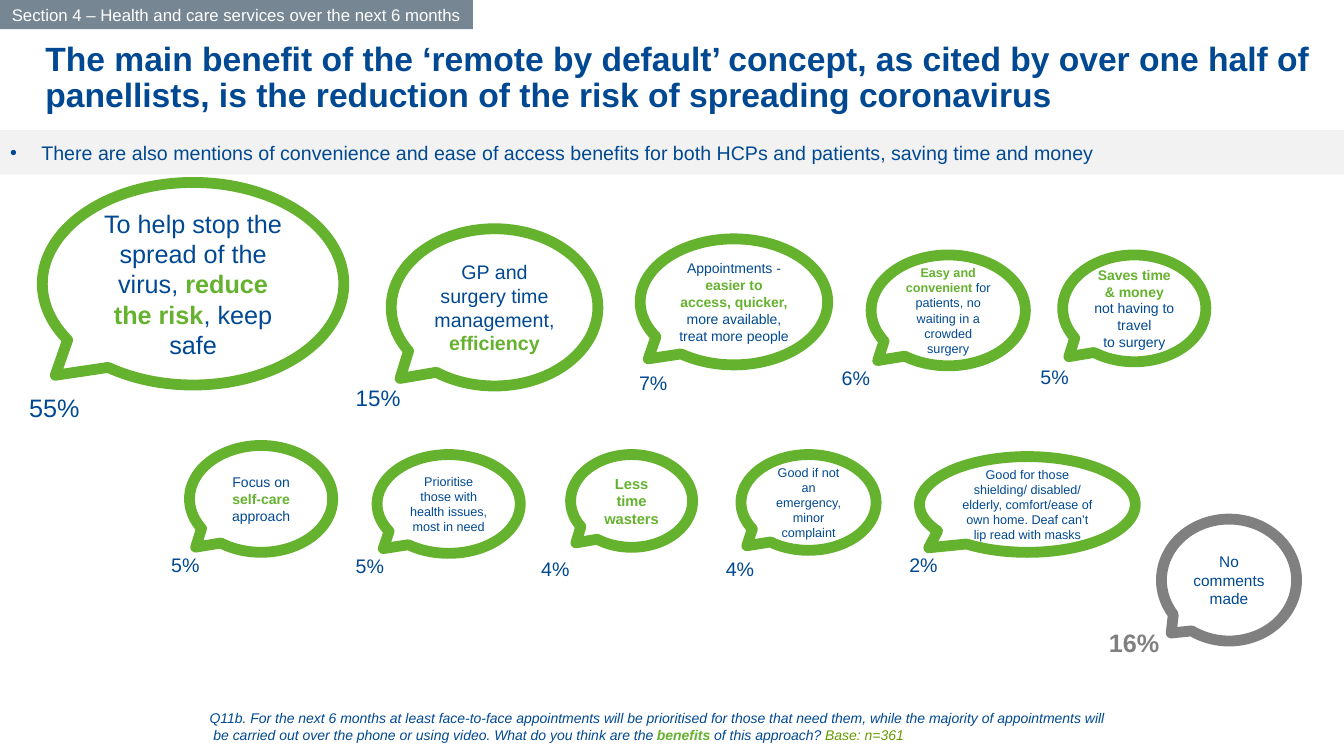
from pptx import Presentation
from pptx.dml.color import RGBColor
from pptx.enum.shapes import MSO_SHAPE as Shape
from pptx.enum.text import MSO_ANCHOR as Anchor, MSO_AUTO_SIZE as AutoSize, PP_ALIGN as Align
from pptx.util import Inches, Pt

COLOURS = {
    "navy": "004992",
    "green": "65B22E",
    "base": "669900",
    "grey": "808080",
    "tag": "768692",
    "band": "F2F2F2",
    "white": "FFFFFF",
}

LABEL_HEIGHTS = {14: 0.34, 16: 0.37, 18: 0.4}
GREEN_TAIL = (-0.457, 0.452)
GREY_TAIL = (-0.428, 0.434)

# Bubble box, text size, text with *accents*, then share, its left, top, width and size.
MENTIONS = [
    ((0.42, 1.81, 2.99, 2.01), 18, "To help stop the spread of the virus, *reduce the risk*, keep safe",
     ("55%", 0.19, 3.84, 0.71, 18)),
    ((3.88, 2.27, 2.05, 1.56), 14, "GP and surgery time\nmanagement, *efficiency*",
     ("15%", 3.43, 3.76, 0.65, 16)),
    ((6.35, 2.37, 1.86, 1.25), 10,
     "Appointments - *easier to*\n*access, quicker, *more available, treat more people",
     ("7%", 6.24, 3.63, 0.49, 14)),
    ((8.64, 2.53, 1.53, 1.1), 9, "*Easy and convenient *for patients, no waiting in a crowded surgery",
     ("6%", 8.25, 3.58, 0.49, 14)),
    ((10.54, 2.53, 1.42, 1.06), 10, "*Saves time & money *not having to travel\nto surgery",
     ("5%", 10.22, 3.57, 0.49, 14)),
    ((1.88, 4.42, 1.42, 1.06), 10, "Focus on *self-care *approach",
     ("5%", 1.6, 5.44, 0.56, 14)),
    ((3.74, 4.51, 1.42, 0.98), 9, "Prioritise those with health issues, most in need",
     ("5%", 3.43, 5.45, 0.56, 14)),
    ((5.66, 4.51, 1.21, 0.92), 10.5, "*Less time wasters*",
     ("4%", 5.27, 5.48, 0.56, 14)),
    ((7.35, 4.51, 1.34, 0.95), 9, "Good if not an emergency, minor complaint",
     ("4%", 7.1, 5.48, 0.49, 14)),
    ((9.12, 4.53, 2.14, 0.95), 9,
     "Good for those shielding/ disabled/ elderly, comfort/ease of own home. "
     "Deaf can’t lip read with masks",
     ("2%", 8.92, 5.44, 0.49, 14)),
]


def colour(name):
    """Return a palette colour."""
    return RGBColor.from_string(COLOURS[name])


def inches(box):
    """Convert a box of numbers to lengths."""
    return [Inches(value) for value in box]


def place(shape, box):
    """Move and size a placeholder."""
    shape.left, shape.top, shape.width, shape.height = inches(box)


def write(shape, text, size, ink="navy", bold=False, italic=False, align=Align.LEFT, anchor=Anchor.TOP):
    """Fill a shape with paragraphs, showing *marked* parts in bold green."""
    frame = shape.text_frame
    frame.word_wrap = True
    frame.auto_size = AutoSize.NONE
    frame.vertical_anchor = anchor
    for index, line in enumerate(text.split("\n")):
        paragraph = frame.add_paragraph() if index else frame.paragraphs[0]
        paragraph.alignment = align
        paragraph.space_before = Pt(0)
        font = paragraph.font
        font.name, font.size, font.bold, font.italic = "Arial", Pt(size), bold, italic
        font.color.rgb = colour(ink)
        for position, part in enumerate(line.split("*")):
            if part:
                run = paragraph.add_run()
                run.text = part
                if position % 2:
                    run.font.bold = True
                    run.font.color.rgb = colour("green")
    return frame


def add_label(slide, text, left, top, width, size, ink="navy", bold=False):
    """Add the share of panellists beside a bubble."""
    box = (left, top, width, LABEL_HEIGHTS[size])
    write(slide.shapes.add_textbox(*inches(box)), text, size, ink, bold)


def add_bubble(slide, box, size, text, outline="green", tail=GREEN_TAIL):
    """Add an outlined speech bubble."""
    bubble = slide.shapes.add_shape(Shape.OVAL_CALLOUT, *inches(box))
    bubble.shadow.inherit = False
    bubble.adjustments[0], bubble.adjustments[1] = tail
    bubble.fill.background()
    bubble.line.color.rgb = colour(outline)
    bubble.line.width = Pt(7.75)
    write(bubble, text, size, align=Align.CENTER, anchor=Anchor.MIDDLE)


def add_section_tag(slide, text):
    """Add the section strip at the top left."""
    tag = slide.shapes.add_shape(Shape.RECTANGLE, *inches((0, 0, 4.69, 0.29)))
    tag.shadow.inherit = False
    tag.fill.solid()
    tag.fill.fore_color.rgb = colour("tag")
    tag.line.fill.background()
    write(tag, text, 12, "white", align=Align.CENTER, anchor=Anchor.MIDDLE)


def fill_title(slide, text):
    """Place and fill the title."""
    title = slide.shapes.title
    place(title, (0.21, 0.37, 13.3, 0.73))
    frame = write(title, text, 24, bold=True)
    frame.margin_left = frame.margin_right = Inches(0.24)
    frame.paragraphs[0].line_spacing = 0.9


def fill_summary(slide, text):
    """Place and fill the bulleted band below the title."""
    band = slide.placeholders[1]
    place(band, (0, 1.29, 13.33, 0.44))
    band.fill.solid()
    band.fill.fore_color.rgb = colour("band")
    frame = write(band, text, 14, anchor=Anchor.MIDDLE)
    properties = frame.paragraphs[0]._p.get_or_add_pPr()
    properties.set("marL", str(Inches(0.31)))
    properties.set("indent", str(Inches(-0.31)))


def add_question(slide, text, base):
    """Add the survey question and its base size."""
    box = slide.shapes.add_textbox(*inches((1.98, 6.99, 10.74, 0.44)))
    frame = write(box, text, 10, italic=True)
    run = frame.paragraphs[-1].add_run()
    run.text = base
    run.font.color.rgb = colour("base")


def main():
    """Build and save the slide."""
    presentation = Presentation()
    presentation.slide_width = Inches(13.33)
    presentation.slide_height = Inches(7.5)
    slide = presentation.slides.add_slide(presentation.slide_layouts[1])

    fill_title(slide, "The main benefit of the ‘remote by default’ concept, as cited by over one half "
                      "of panellists, is the reduction of the risk of spreading coronavirus")
    fill_summary(slide, "There are also mentions of convenience and ease of access benefits "
                        "for both HCPs and patients, saving time and money")
    add_section_tag(slide, "Section 4 – Health and care services over the next 6 months")
    for box, size, text, label in MENTIONS:
        add_bubble(slide, box, size, text)
        add_label(slide, *label)
    add_bubble(slide, (11.52, 5.15, 1.34, 1.21), 11, "No comments made", "grey", GREY_TAIL)
    add_label(slide, "16%", 10.9, 6.17, 0.71, 18, "grey", True)
    add_question(slide, "Q11b. For the next 6 months at least face-to-face appointments will be prioritised "
                        "for those that need them, while the majority of appointments will\n"
                        " be carried out over the phone or using video. What do you think are the "
                        "*benefits* of this approach? ", "Base: n=361")
    presentation.save("out.pptx")


if __name__ == "__main__":
    main()
